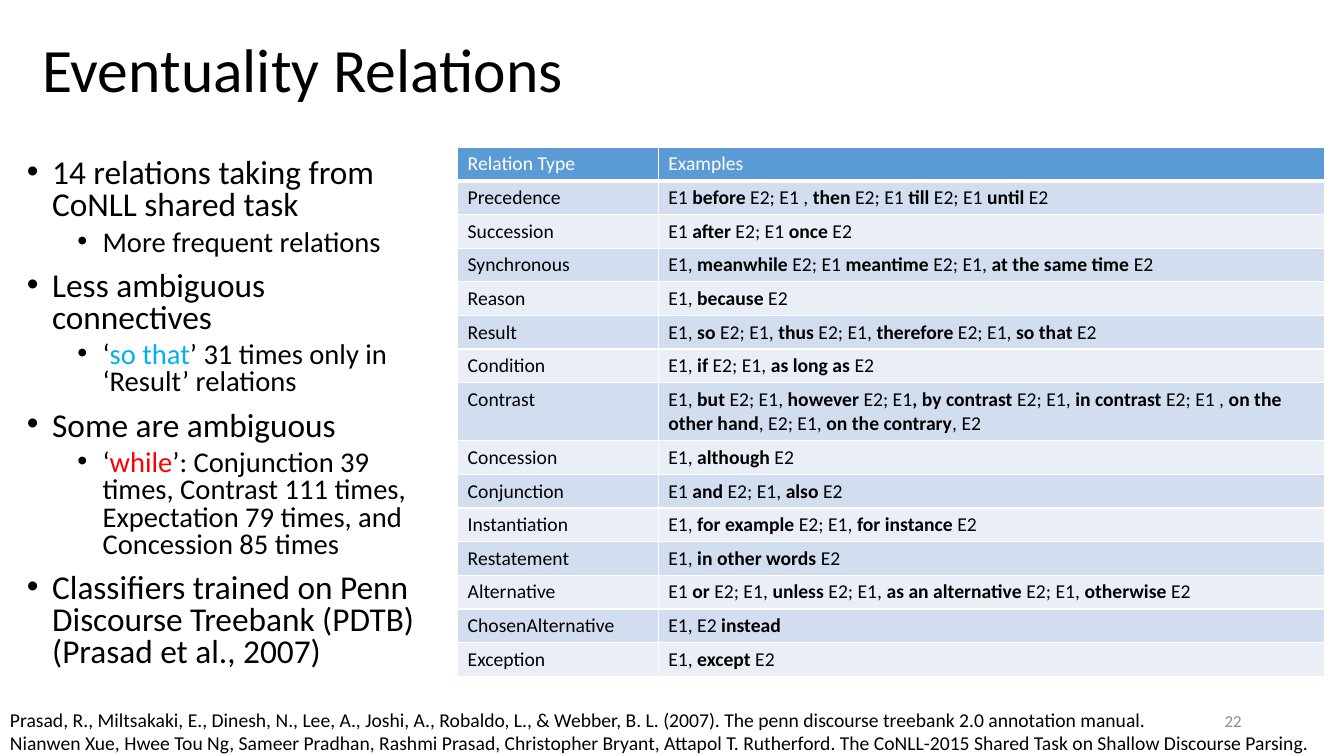
from lxml import etree
from pptx import Presentation
from pptx.dml.color import RGBColor
from pptx.enum.text import MSO_ANCHOR, PP_ALIGN
from pptx.oxml.ns import qn
from pptx.util import Pt

MIDDLE = MSO_ANCHOR.MIDDLE
RIGHT = PP_ALIGN.RIGHT
FONT = "Calibri"
COLOURS = {
    "text": "000000", "white": "FFFFFF", "number": "8C8C8C",
    "header": "5B9BD5", "odd": "D2DEEF", "even": "EAEFF7",
    "blue": "00B0F0", "red": "FF0000",
}

# Level, text and the colour of the part between asterisks
BULLETS = [
    (0, "14 relations taking from CoNLL shared task", None),
    (1, "More frequent relations", None),
    (0, "Less ambiguous connectives", None),
    (1, "‘*so that*’ 31 times only in ‘Result’ relations", "blue"),
    (0, "Some are ambiguous", None),
    (1, "‘*while*’: Conjunction 39 times, Contrast 111 times, "
        "Expectation 79 times, and Concession 85 times", "red"),
    (0, "Classifiers trained on Penn Discourse Treebank (PDTB) "
        "(Prasad et al., 2007)", None),
]
# Size, space before and left indent of each bullet level
LEVELS = [(23.8, 10, 18), (20.4, 5, 54)]

# Connectives between asterisks are bold
RELATIONS = [
    ("Relation Type", "Examples"),
    ("Precedence", "E1 *before* E2; E1 , *then* E2; E1 *till* E2; E1 *until* E2"),
    ("Succession", "E1 *after* E2; E1 *once* E2"),
    ("Synchronous", "E1, *meanwhile* E2; E1 *meantime* E2; E1, *at the same time *E2"),
    ("Reason", "E1, *because* E2"),
    ("Result", "E1, *so* E2; E1, *thus* E2; E1, *therefore* E2; E1, *so that *E2"),
    ("Condition", "E1, *if* E2; E1, *as long as *E2"),
    ("Contrast", "E1, *but* E2; E1, *however* E2; E1*, by contrast *E2; E1, "
                 "*in contrast *E2; E1 , *on the other hand*, E2; E1, "
                 "*on the contrary*, E2"),
    ("Concession", "E1, *although* E2"),
    ("Conjunction", "E1 *and* E2; E1, *also* E2"),
    ("Instantiation", "E1, *for example *E2; E1, *for instance *E2"),
    ("Restatement", "E1, *in other words *E2"),
    ("Alternative", "E1 *or* E2; E1, *unless* E2; E1, *as an alternative *E2; "
                    "E1, *otherwise* E2"),
    ("ChosenAlternative", "E1, E2 *instead*"),
    ("Exception", "E1, *except* E2"),
]
REFERENCES = [
    "Prasad, R., Miltsakaki, E., Dinesh, N., Lee, A., Joshi, A., Robaldo, L., "
    "& Webber, B. L. (2007). The penn discourse treebank 2.0 annotation manual.",
    "Nianwen Xue, Hwee Tou Ng, Sameer Pradhan, Rashmi Prasad, Christopher Bryant, "
    "Attapol T. Rutherford. The CoNLL-2015 Shared Task on Shallow Discourse Parsing.",
]


def rgb(name):
    return RGBColor.from_string(COLOURS[name])


def write(para, text, size, colour="text", marked_colour=None, marked_bold=False):
    """Fill a paragraph; text between asterisks takes the marked format."""
    for index, part in enumerate(text.split("*")):
        if not part:
            continue
        marked = index % 2 == 1
        span = para.add_run()
        span.text = part
        span.font.name = FONT
        span.font.size = Pt(size)
        span.font.bold = marked and marked_bold
        span.font.color.rgb = rgb(marked_colour if marked and marked_colour else colour)


def add_text_frame(page, box):
    frame = page.shapes.add_textbox(*map(Pt, box)).text_frame
    frame.word_wrap = True
    return frame


def add_title(page, box):
    frame = add_text_frame(page, box)
    frame.vertical_anchor = MIDDLE
    frame.paragraphs[0].line_spacing = 0.9
    write(frame.paragraphs[0], "Eventuality Relations", 44)


def add_bullets(page, box):
    frame = add_text_frame(page, box)
    for index, (level, text, colour) in enumerate(BULLETS):
        para = frame.add_paragraph() if index else frame.paragraphs[0]
        size, before, indent = LEVELS[level]
        para.level = level
        para.line_spacing = 0.8
        para.space_before = Pt(before)
        properties = para._p.get_or_add_pPr()
        properties.set("marL", str(Pt(indent)))
        properties.set("indent", str(Pt(-18)))
        etree.SubElement(properties, qn("a:buFont"), typeface="Arial")
        etree.SubElement(properties, qn("a:buChar"), char="•")
        write(para, text, size, marked_colour=colour)


def add_borders(cell, bottom_width):
    properties = cell._tc.get_or_add_tcPr()
    for side, width in (("L", 1), ("R", 1), ("T", 1), ("B", bottom_width)):
        line = etree.SubElement(properties, qn("a:ln" + side), w=str(Pt(width)))
        fill = etree.SubElement(line, qn("a:solidFill"))
        etree.SubElement(fill, qn("a:srgbClr"), val=COLOURS["white"])


def add_relations(page, box):
    left, top, width, height = box
    type_width, row_height = 143.3, 24
    table = page.shapes.add_table(len(RELATIONS), 2, *map(Pt, box)).table
    table.columns[0].width = Pt(type_width)
    table.columns[1].width = Pt(width - type_width)
    for index, texts in enumerate(RELATIONS):
        # The contrast examples need two lines and take the spare height
        tall = texts[0] == "Contrast"
        spare = height - row_height * (len(RELATIONS) - 1)
        table.rows[index].height = Pt(spare if tall else row_height)
        fill = ("odd" if index % 2 else "even") if index else "header"
        for column, text in enumerate(texts):
            cell = table.cell(index, column)
            add_borders(cell, 1 if index else 3)
            cell.fill.solid()
            cell.fill.fore_color.rgb = rgb(fill)
            write(cell.text_frame.paragraphs[0], text, 14,
                  "text" if index else "white", marked_bold=True)


def add_references(page, box):
    frame = add_text_frame(page, box)
    for index, text in enumerate(REFERENCES):
        para = frame.add_paragraph() if index else frame.paragraphs[0]
        write(para, text, 14)


def add_page_number(page, box):
    frame = add_text_frame(page, box)
    frame.vertical_anchor = MIDDLE
    frame.paragraphs[0].alignment = RIGHT
    write(frame.paragraphs[0], "22", 12, "number")


def main():
    deck = Presentation()
    deck.slide_width, deck.slide_height = Pt(960), Pt(540)
    page = deck.slides.add_slide(deck.slide_layouts[6])
    add_title(page, (23, -0.7, 828, 104.4))
    add_bullets(page, (12.2, 110.2, 303.1, 370.8))
    add_relations(page, (326.9, 105.1, 619.2, 377.4))
    add_references(page, (0, 501.8, 960, 41.2))
    add_page_number(page, (678, 500.5, 216, 28.75))
    deck.save("out.pptx")


if __name__ == "__main__":
    main()
